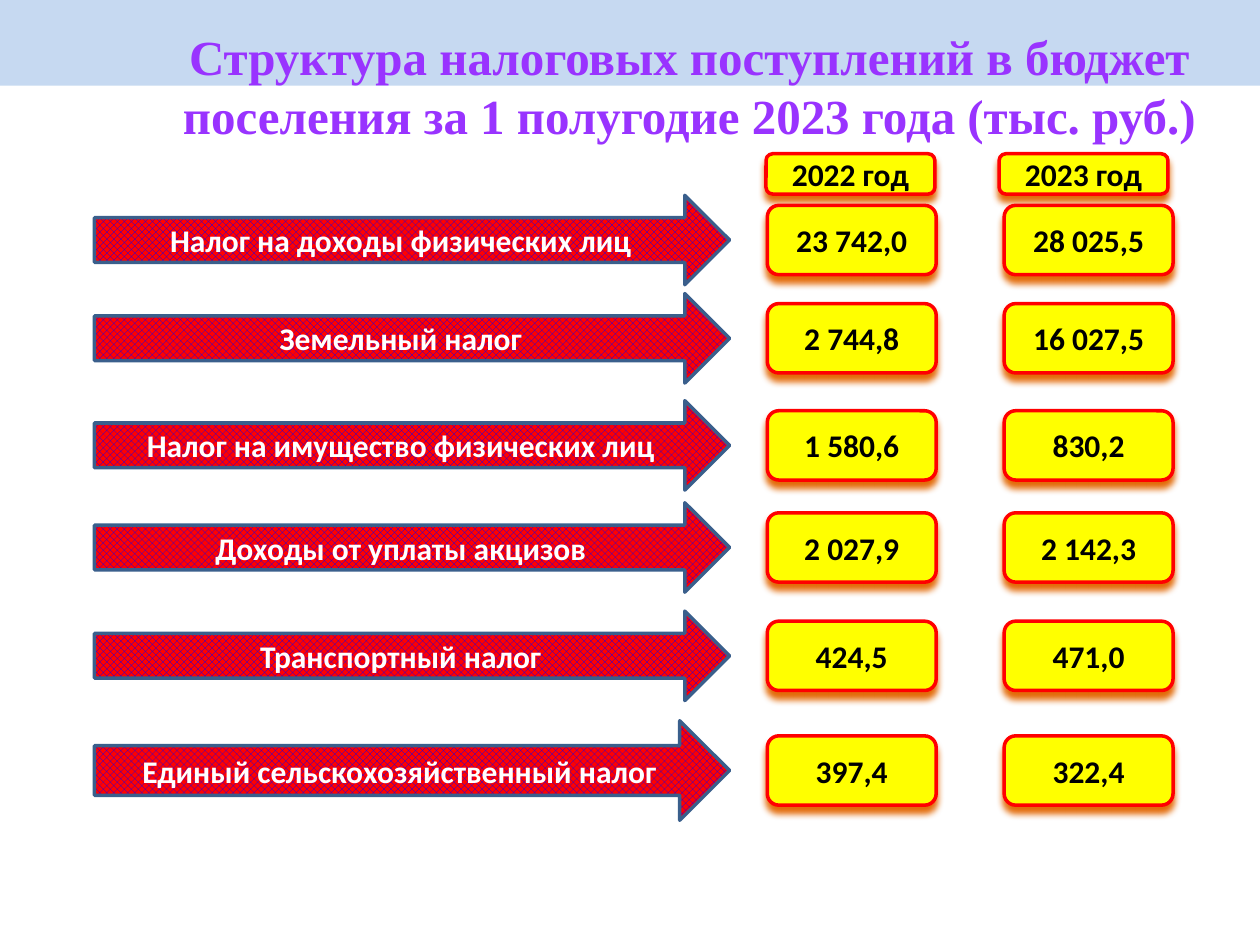
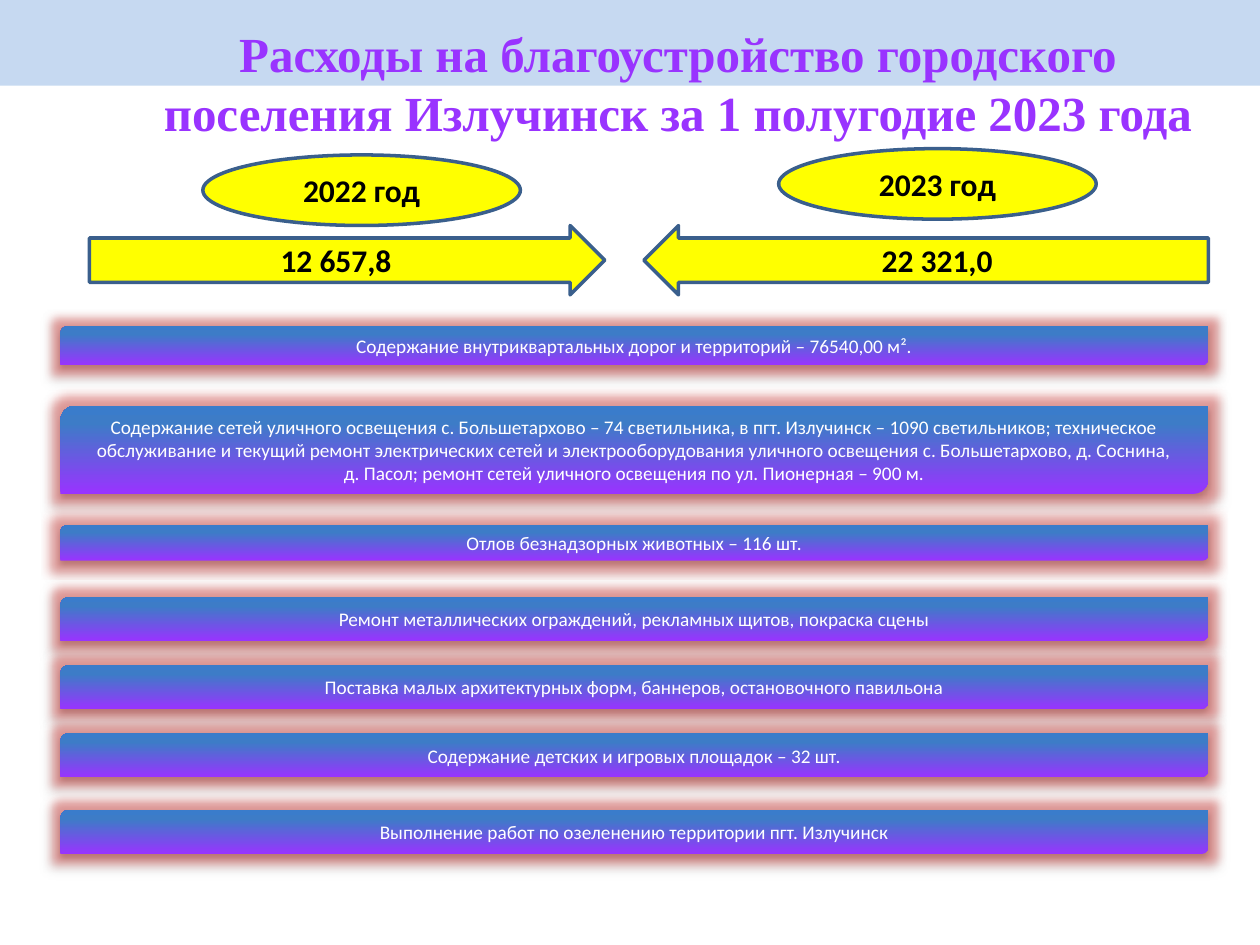
"""Build two slides on the settlement's tax revenues and landscaping costs."""
from dataclasses import dataclass
from typing import Optional

from lxml.etree import SubElement
from pptx import Presentation
from pptx.dml.color import RGBColor
from pptx.enum.dml import MSO_PATTERN_TYPE as Pattern
from pptx.enum.shapes import MSO_SHAPE as Shape
from pptx.enum.text import MSO_ANCHOR as Anchor, PP_ALIGN as Align
from pptx.oxml.ns import qn
from pptx.util import Inches, Pt

COLORS = {
    "band": "C6D9F1",
    "violet": "9933FF",
    "white": "FFFFFF",
    "black": "000000",
    "yellow": "FFFF00",
    "red": "FF0000",
    "blue": "0000FF",
    "outline": "3A5F8C",
    "orange": "E46C0A",
    "glow": "D9302C",
    "sky": "3D7CC7",
    "sky_top": "3A7CCB",
}
WORK_GRADIENT = ((0, "violet"), (80, "sky"), (100, "sky_top"))


@dataclass(frozen=True)
class Box:
    left: float
    top: float
    width: float
    height: float

    def lengths(self) -> tuple:
        return tuple(Inches(v) for v in (self.left, self.top, self.width, self.height))


@dataclass(frozen=True)
class Shadow:
    color: str
    alpha: int
    blur: float
    distance: float


@dataclass(frozen=True)
class Style:
    fill: Optional[str] = None
    line: Optional[str] = None
    text: str = "black"
    size: int = 18
    bold: bool = True
    shadow: Optional[Shadow] = None
    glow: Optional[str] = None


@dataclass(frozen=True)
class TaxRow:
    label: str
    top: float
    amounts: tuple
    height: float = 0.71


@dataclass(frozen=True)
class YearColumn:
    year: str
    header_left: float
    left: float


@dataclass(frozen=True)
class YearTotal:
    year: str
    amount: str
    oval: Box
    arrow: Box
    direction: Shape


@dataclass(frozen=True)
class Work:
    text: str
    top: float
    height: float = 0.35


BAND = Style(fill="band")
TAX = Style(line="outline", text="white")
AMOUNT = Style("yellow", "red", shadow=Shadow("orange", 100, 4, 4))
TOTAL = Style("yellow", "outline")
WORK = Style(text="white", size=11, bold=False, glow="glow",
             shadow=Shadow("black", 35, 3.1, 1.8))

YEARS = (YearColumn("2022 год", 6.08, 6.09), YearColumn("2023 год", 7.93, 7.97))
TAXES = (
    TaxRow("Налог на доходы физических лиц", 1.55, ("23 742,0", "28 025,5")),
    TaxRow("Земельный налог", 2.33, ("2 744,8", "16 027,5")),
    TaxRow("Налог на имущество физических лиц", 3.18, ("1 580,6", "830,2")),
    TaxRow("Доходы от уплаты акцизов", 3.99, ("2 027,9", "2 142,3")),
    TaxRow("Транспортный налог", 4.85, ("424,5", "471,0")),
    TaxRow("Единый сельскохозяйственный налог", 5.72, ("397,4", "322,4"), 0.79),
)
TOTALS = (
    YearTotal("2022 год", "12 657,8", Box(1.61, 1.23, 2.52, 0.56),
              Box(0.71, 1.79, 4.09, 0.55), Shape.RIGHT_ARROW),
    YearTotal("2023 год", "22 321,0", Box(6.18, 1.18, 2.52, 0.56),
              Box(5.11, 1.79, 4.48, 0.55), Shape.LEFT_ARROW),
)
WORKS = (
    Work("Содержание внутриквартальных дорог и территорий – 76540,00 м².", 2.59, 0.31),
    Work("Содержание сетей уличного освещения с. Большетархово – 74 светильника, "
         "в пгт. Излучинск – 1090 светильников; техническое обслуживание и текущий "
         "ремонт электрических сетей и электрооборудования уличного освещения "
         "с. Большетархово, д. Соснина,\vд. Пасол; ремонт сетей уличного освещения "
         "по ул. Пионерная – 900 м.", 3.22, 0.7),
    Work("Отлов безнадзорных животных – 116 шт.", 4.17, 0.28),
    Work("Ремонт металлических ограждений, рекламных щитов, покраска сцены", 4.74),
    Work("Поставка малых архитектурных форм, баннеров, остановочного павильона", 5.28),
    Work("Содержание детских и игровых площадок – 32 шт.", 5.82),
    Work("Выполнение работ по озеленению территории пгт. Излучинск", 6.43),
)


def rgb(name: str) -> RGBColor:
    return RGBColor.from_string(COLORS[name])


def add_color(parent, name: str, alpha: int = 100) -> None:
    color = SubElement(parent, qn("a:srgbClr"), val=COLORS[name])
    if alpha < 100:
        SubElement(color, qn("a:alpha"), val=str(alpha * 1000))


def add_effects(shape, style: Style) -> None:
    shape.shadow.inherit = False
    effects = shape.element.spPr.find(qn("a:effectLst"))
    if style.glow:
        glow = SubElement(effects, qn("a:glow"), rad=str(Pt(11)))
        add_color(glow, style.glow, 40)
    if style.shadow:
        shadow = SubElement(effects, qn("a:outerShdw"), blurRad=str(Pt(style.shadow.blur)),
                            dist=str(Pt(style.shadow.distance)), dir="5400000",
                            rotWithShape="0")
        add_color(shadow, style.shadow.color, style.shadow.alpha)


def set_font(paragraph, name: str, size: int, color: str, bold: bool) -> None:
    paragraph.alignment = Align.CENTER
    font = paragraph.font
    font.name, font.size, font.bold = name, Pt(size), bold
    font.color.rgb = rgb(color)


def add_block(slide, kind: Shape, box: Box, style: Style, text: str = ""):
    block = slide.shapes.add_shape(kind, *box.lengths())
    if style.fill:
        block.fill.solid()
        block.fill.fore_color.rgb = rgb(style.fill)
    if style.line:
        block.line.color.rgb = rgb(style.line)
        block.line.width = Pt(2)
    else:
        block.line.fill.background()
    add_effects(block, style)
    if text:
        frame = block.text_frame
        frame.word_wrap = True
        frame.vertical_anchor = Anchor.MIDDLE
        frame.margin_top = frame.margin_bottom = 0
        frame.text = text
        set_font(frame.paragraphs[0], "Calibri", style.size, style.text, style.bold)
    return block


def fill_pattern(arrow) -> None:
    arrow.fill.patterned()
    arrow.fill.pattern = Pattern.OUTLINED_DIAMOND
    arrow.fill.fore_color.rgb = rgb("blue")
    arrow.fill.back_color.rgb = rgb("red")


def fill_gradient(bar) -> None:
    bar.fill.gradient()
    bar.fill.gradient_angle = 90
    stops = bar.element.spPr.find(qn("a:gradFill")).find(qn("a:gsLst"))
    for stop in list(stops):
        stops.remove(stop)
    for position, color in WORK_GRADIENT:
        add_color(SubElement(stops, qn("a:gs"), pos=str(position * 1000)), color)


def add_titled_slide(deck, text: str, left: float, top: float):
    slide = deck.slides.add_slide(deck.slide_layouts[5])
    title = slide.shapes.title
    title.left, title.top, title.width, title.height = Box(left, top, 9, 1.25).lengths()
    frame = title.text_frame
    frame.word_wrap = True
    frame.vertical_anchor = Anchor.TOP
    frame.text = text
    set_font(frame.paragraphs[0], "Times New Roman", 28, "violet", True)
    return slide


def add_layout_band(slide) -> None:
    band = add_block(slide, Shape.RECTANGLE, Box(0, 0, 10, 0.68), BAND)
    slide.slide_layout.shapes.element.insert(2, band.element)


def draw_taxes(slide) -> None:
    for column in YEARS:
        header = Box(column.header_left, 1.22, 1.34, 0.32)
        add_block(slide, Shape.ROUNDED_RECTANGLE, header, AMOUNT, column.year)
    for row in TAXES:
        arrow_box = Box(0.75, row.top, 5.04, row.height)
        fill_pattern(add_block(slide, Shape.RIGHT_ARROW, arrow_box, TAX, row.label))
        amount_top = row.top + (row.height - 0.55) / 2
        for column, amount in zip(YEARS, row.amounts):
            cell = Box(column.left, amount_top, 1.34, 0.55)
            add_block(slide, Shape.ROUNDED_RECTANGLE, cell, AMOUNT, amount)


def draw_works(slide) -> None:
    for total in TOTALS:
        arrow = add_block(slide, total.direction, total.arrow, TOTAL, total.amount)
        arrow.adjustments[0] = 0.64
        add_block(slide, Shape.OVAL, total.oval, TOTAL, total.year)
    for work in WORKS:
        bar_box = Box(0.48, work.top, 9.11, work.height)
        fill_gradient(add_block(slide, Shape.ROUND_2_DIAG_RECTANGLE, bar_box, WORK, work.text))


def main() -> None:
    deck = Presentation()
    deck.slide_width, deck.slide_height = Inches(10), Inches(7.5)
    taxes = add_titled_slide(
        deck, "Структура налоговых поступлений в бюджет поселения "
        "за 1 полугодие 2023 года (тыс. руб.)", 0.97, 0.16)
    add_layout_band(taxes)
    draw_taxes(taxes)
    works = add_titled_slide(
        deck, "Расходы на благоустройство городского поселения Излучинск "
        "за 1 полугодие 2023 года", 0.88, 0.14)
    draw_works(works)
    deck.save("out.pptx")


if __name__ == "__main__":
    main()
